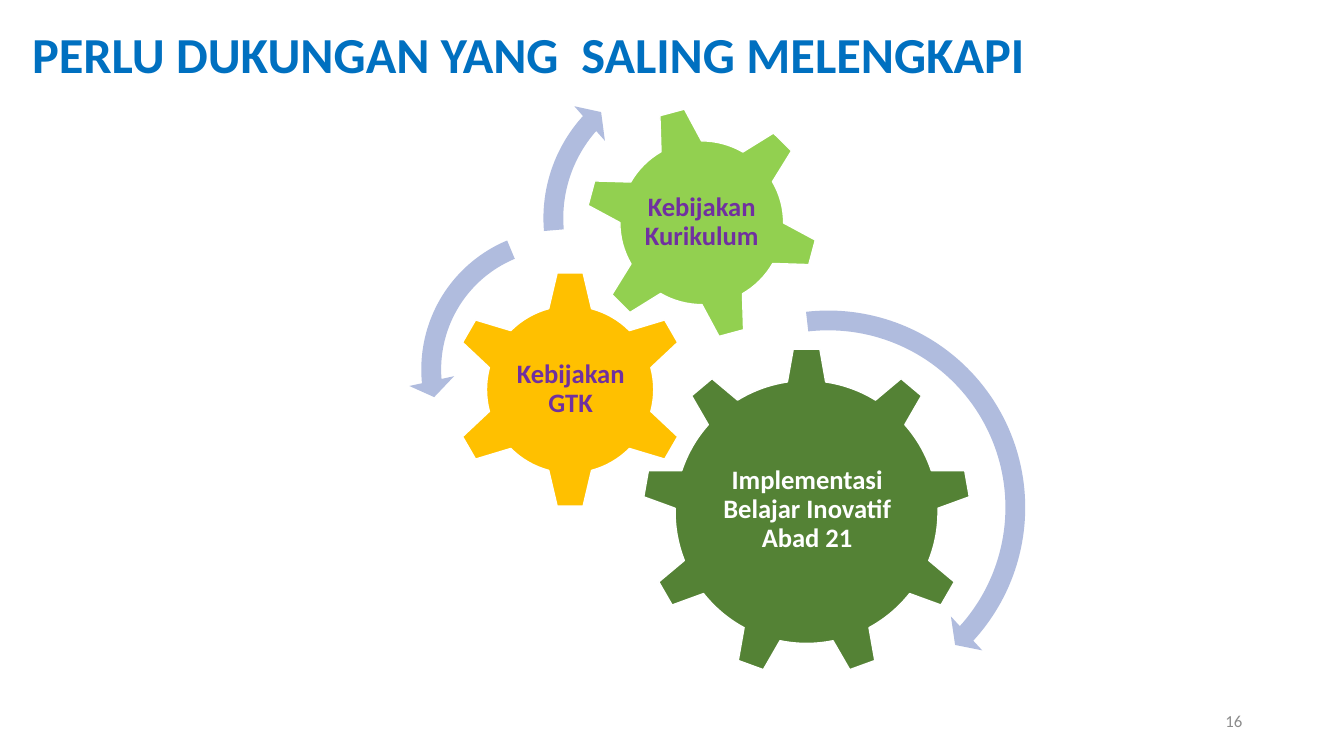
import pptx
import pptx.util
import pptx.dml.color
import pptx.enum.shapes
import pptx.enum.text
from pptx.util import Inches

SHAPE = pptx.enum.shapes.MSO_SHAPE
ALIGN = pptx.enum.text.PP_ALIGN
ANCHOR = pptx.enum.text.MSO_ANCHOR


def rgb(hex_color):
    return pptx.dml.color.RGBColor.from_string(hex_color)


def add_text(box, text, size, color, bold=True, align=ALIGN.CENTER,
             anchor=ANCHOR.MIDDLE):
    """Add a wrapped one-paragraph text box and return its text frame."""
    tf = s.shapes.add_textbox(*map(Inches, box)).text_frame
    tf.word_wrap = True
    tf.vertical_anchor = anchor
    p = tf.paragraphs[0]
    p.text = text
    p.alignment = align
    p.font.name = "Calibri"
    p.font.size = pptx.util.Pt(size)
    p.font.bold = bold
    p.font.color.rgb = rgb(color)
    return tf


prs = pptx.Presentation()
prs.slide_width, prs.slide_height = Inches(13.33), Inches(7.5)
s = prs.slides.add_slide(prs.slide_layouts[6])

add_text((9.42, 6.95, 3, 0.4), "16", 12, "8C8C8C", False, ALIGN.RIGHT)

# Gears: shape, left, top, size, rotation, fill, label box, label, label colour
gears = [
    (SHAPE.GEAR_9, 6.37, 3.45, 3.26, 0, "548235", (7.03, 4.22, 1.95, 1.68),
     "Implementasi Belajar Inovatif Abad 21", "FFFFFF"),
    (SHAPE.GEAR_6, 4.47, 2.68, 2.37, 0, "FFC000", (5.07, 3.28, 1.18, 1.17),
     "Kebijakan GTK", "7030A0"),
    (SHAPE.GEAR_6, 5.8, 1.05, 2.32, 345, "92D050", (6.31, 1.56, 1.3, 1.3),
     "Kebijakan Kurikulum", "7030A0"),
]
for shape, left, top, size, rotation, fill, box, label, color in gears:
    sp = s.shapes.add_shape(shape, Inches(left), Inches(top), Inches(size), Inches(size))
    sp.rotation = rotation
    sp.shadow.inherit = False
    sp.fill.solid()
    sp.fill.fore_color.rgb = rgb(fill)
    sp.line.color.rgb = rgb("FFFFFF")
    sp.line.width = pptx.util.Pt(1)
    tf = add_text(box, label, 19, color)
    tf.margin_left = tf.margin_right = tf.margin_top = tf.margin_bottom = Inches(0.03)
    tf.paragraphs[0].line_spacing = 0.9

# Arrows: shape, left, top, size, band %, head angle, end angle, start angle, head %
arrows = [
    (SHAPE.CIRCULAR_ARROW, 6.13, 2.95, 4.17, 4.7, 4.98, 42.32, 263.54, 5.5),
    (SHAPE.LEFT_CIRCULAR_ARROW, 4.05, 2.15, 3.03, 6.5, 7.17, 174.82, 247.3, 7.5),
    (SHAPE.CIRCULAR_ARROW, 5.26, 0.53, 3.27, 6, 6.57, 221.9, 175.14, 7),
]
for shape, left, top, size, band, head_angle, end, start, head in arrows:
    sp = s.shapes.add_shape(shape, Inches(left), Inches(top), Inches(size), Inches(size))
    # Angles are stored in 1/60000 degree, adjustments in 1/100000
    values = (band / 100, head_angle * 0.6, end * 0.6, start * 0.6, head / 100)
    for i, value in enumerate(values):
        sp.adjustments[i] = value
    sp.shadow.inherit = False
    sp.fill.solid()
    sp.fill.fore_color.rgb = rgb("B0BCDE")
    sp.line.fill.background()

add_text((0.22, 0.18, 12.26, 0.71), "PERLU DUKUNGAN YANG  SALING MELENGKAPI",
         36, "0070C0", align=ALIGN.LEFT, anchor=ANCHOR.TOP)

prs.save("out.pptx")
